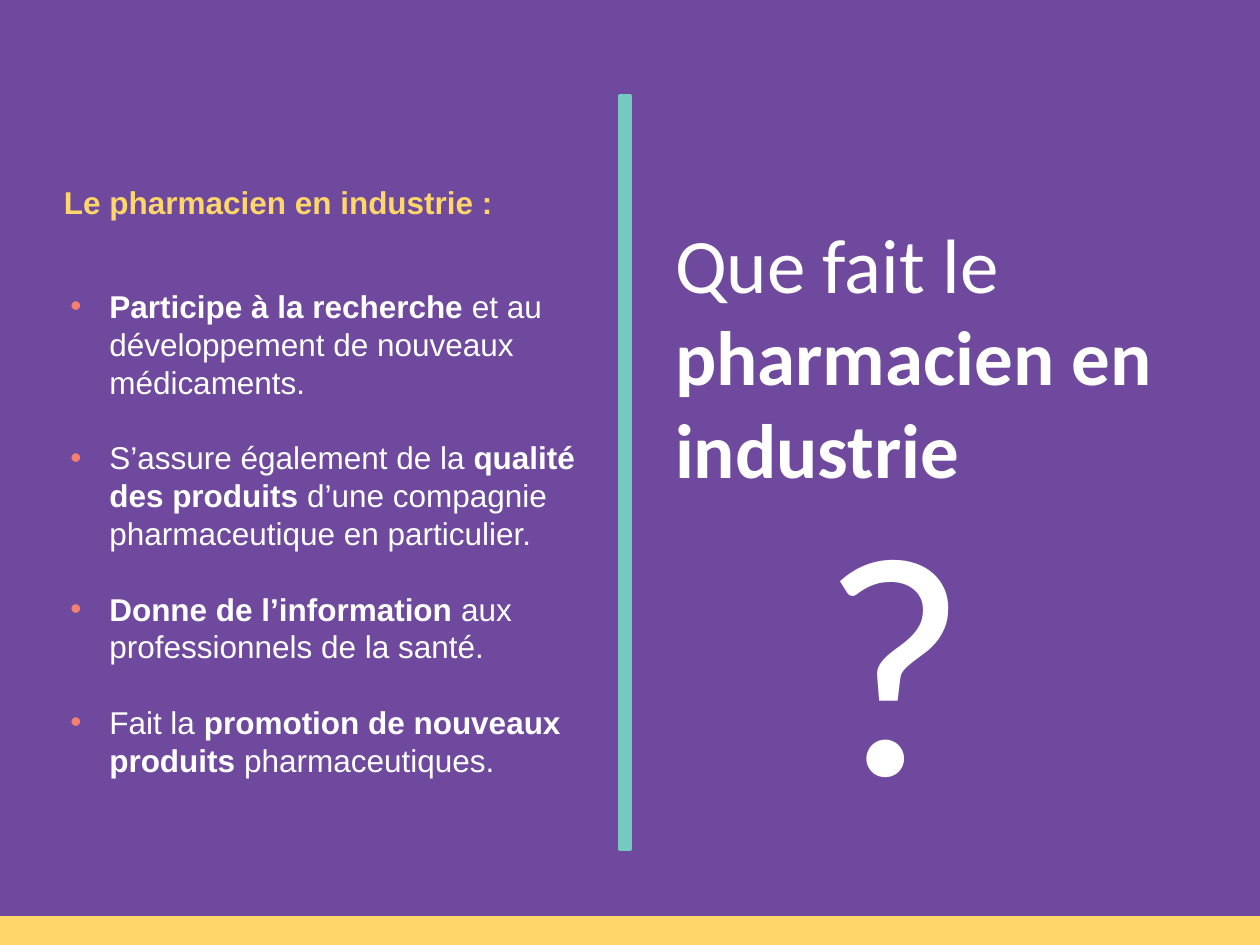
from lxml.etree import SubElement
from pptx import Presentation
from pptx.dml.color import RGBColor as RGB
from pptx.enum.shapes import MSO_SHAPE as SHAPE
from pptx.oxml.ns import qn
from pptx.util import Inches, Pt

WHITE, YELLOW, CORAL = "FFFFFF", "FED669", "F4806F"

# left, top, width, height, colour
BARS = [
    (0, 0, 10, 7.5, "6E499D"),
    (4.92, 0.76, 0.08, 5.98, "74CAC1"),
    (0, 7.28, 10, 0.22, YELLOW),
]

# Each paragraph is a list of (text, bold) runs
TITLE = [[("Que fait le ", False), ("pharmacien en industrie", True)]]
HEAD = [[("Le pharmacien en industrie :", True)]]
MARK = [[("?", False)]]
TASKS = [
    [("Participe à la recherche ", True),
     ("et au développement de nouveaux médicaments.", False)],
    [("S’assure également de la ", False), ("qualité des produits ", True),
     ("d’une compagnie pharmaceutique en particulier.", False)],
    [("Donne de l’information ", True),
     ("aux professionnels de la santé.", False)],
    [("Fait la ", False), ("promotion de nouveaux produits", True),
     (" pharmaceutiques.", False)],
]

# place, paragraphs, font, size, colour, bulleted
TEXTS = [
    ((5.26, 1.67, 4.57, 2.32), TITLE, "Calibri", 44, WHITE, False),
    ((0.46, 2.23, 4.33, 4.04), TASKS, "Arial", 18, WHITE, True),
    ((0.41, 1.4, 3.94, 0.4), HEAD, "Arial", 18, YELLOW, False),
    ((6.42, 3.61, 1.34, 3.13), MARK, "Calibri", 180, WHITE, False),
]


def color(code):
    return RGB.from_string(code)


def add_bar(slide, left, top, width, height, code):
    bar = slide.shapes.add_shape(
        SHAPE.RECTANGLE, *map(Inches, (left, top, width, height)))
    bar.shadow.inherit = False
    bar.fill.solid()
    bar.fill.fore_color.rgb = color(code)
    bar.line.color.rgb = color(code)
    bar.line.width = Pt(2)


def add_bullet(para):
    props = para._p.get_or_add_pPr()
    props.set("marL", str(Inches(0.31)))
    props.set("indent", str(Inches(-0.31)))
    tint = SubElement(props, qn("a:buClr"))
    SubElement(tint, qn("a:srgbClr"), val=CORAL)
    SubElement(props, qn("a:buFont"), typeface="Arial")
    SubElement(props, qn("a:buChar"), char="•")


def add_text(slide, place, paras, face, size, code, listed):
    frame = slide.shapes.add_textbox(*map(Inches, place)).text_frame
    frame.word_wrap = True
    for i, runs in enumerate(paras):
        para = frame.add_paragraph() if i else frame.paragraphs[0]
        if i:
            para.space_before = Pt(21.6)
        if listed:
            add_bullet(para)
        for words, bold in runs:
            run = para.add_run()
            run.text = words
            look = {"name": face, "size": Pt(size), "bold": bold}
            for key, value in look.items():
                setattr(run.font, key, value)
            run.font.color.rgb = color(code)


def main():
    deck = Presentation()
    deck.slide_width, deck.slide_height = Inches(10), Inches(7.5)
    slide = deck.slides.add_slide(deck.slide_layouts[6])
    for bar in BARS:
        add_bar(slide, *bar)
    for text in TEXTS:
        add_text(slide, *text)
    deck.save("out.pptx")


if __name__ == "__main__":
    main()
